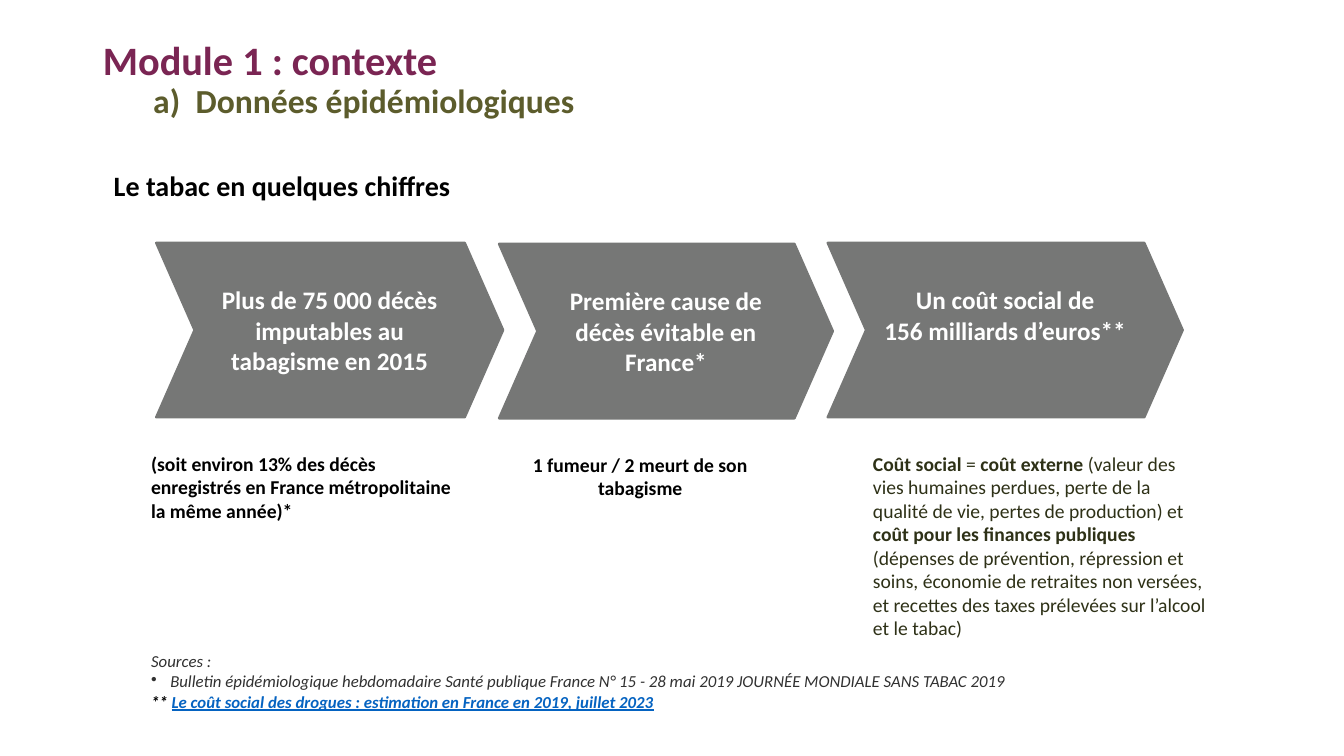
"""Build the slide on tobacco epidemiology figures."""
from pptx import Presentation
from pptx.dml.color import RGBColor
from pptx.enum.shapes import MSO_SHAPE
from pptx.enum.text import MSO_ANCHOR, MSO_AUTO_SIZE, PP_ALIGN
from pptx.util import Inches, Pt
from lxml.etree import SubElement
from pptx.oxml.ns import qn

BLACK, GREY, DARK = "000000", "767776", "2E3117"
LEFT, CENTER = PP_ALIGN.LEFT, PP_ALIGN.CENTER

TITLE = "Module 1 : contexte"
SUBTITLE = "Données épidémiologiques"
HEADING = "Le tabac en quelques chiffres"
CHEVRONS = [
    (1.55, 2.41, 3.44, 0.05, "Plus de 75 000 décès\vimputables au tabagisme en 2015"),
    (4.95, 2.42, 3.31, 0.05, "Première cause de décès évitable en France*"),
    (8.21, 2.41, 3.52, 0.35, "Un coût social de\v156 milliards d’euros**"),
]
NOTES = [
    ((1.4, 4.43, 3.24, 0.81), LEFT, BLACK, [
        ("(soit environ 13% des décès enregistrés en France métropolitaine "
         "la même année)*", True)]),
    ((4.84, 4.44, 3.02, 0.57), CENTER, BLACK, [
        ("1 fumeur / 2 meurt de son tabagisme", True)]),
    ((8.56, 4.43, 3.52, 1.99), LEFT, DARK, [
        ("Coût social ", True),
        ("= ", False),
        ("coût externe ", True),
        ("(valeur des vies humaines perdues, perte de la qualité de vie, "
         "pertes de production) et ", False),
        ("coût pour les finances publiques ", True),
        ("(dépenses de prévention, répression et soins, économie de retraites "
         "non versées, et recettes des taxes prélevées sur l’alcool et le tabac)", False)]),
]
SOURCES = [
    ("Sources :", None),
    ("Bulletin épidémiologique hebdomadaire Santé publique France N° 15 - "
     "28 mai 2019 JOURNÉE MONDIALE SANS TABAC 2019", "•"),
]
STUDY_MARK = "** "
STUDY = "Le coût social des drogues : estimation en France en 2019, juillet 2023"


def rgb(value):
    return RGBColor.from_string(value)


def style(r, size, color, bold=True, italic=False, underline=False):
    font = r.font
    font.name, font.size, font.color.rgb = "Calibri", Pt(size), rgb(color)
    font.bold, font.italic, font.underline = bold, italic, underline


def place(sp, box):
    sp.left, sp.top, sp.width, sp.height = map(Inches, box)


def add_box(s, box):
    tf = s.shapes.add_textbox(*map(Inches, box)).text_frame
    tf.word_wrap = True
    return tf


def add_bullet(p, tag, indent, hang, **attrs):
    pPr = p._p.get_or_add_pPr()
    pPr.set("marL", str(Inches(indent)))
    pPr.set("indent", str(-Inches(hang)))
    SubElement(pPr, qn(tag), **attrs)


def add_runs(p, runs, size, color):
    for text, bold in runs:
        r = p.add_run()
        r.text = text
        style(r, size, color, bold)


def fill_placeholder(sp, box, text, size, color, spacing, anchor):
    place(sp, box)
    tf = sp.text_frame
    tf.text = text
    tf.auto_size, tf.vertical_anchor = MSO_AUTO_SIZE.NONE, anchor
    p = tf.paragraphs[0]
    p.alignment, p.line_spacing, p.space_before = LEFT, spacing, Pt(0)
    style(p.runs[0], size, color)
    return p


def add_chevron(s, left, top, width, bottom, text):
    sp = s.shapes.add_shape(MSO_SHAPE.CHEVRON, *map(Inches, (left, top, width, 1.73)))
    sp.adjustments[0] = 0.22
    sp.shadow.inherit = False
    sp.fill.solid()
    sp.fill.fore_color.rgb = sp.line.color.rgb = rgb(GREY)
    sp.line.width = Pt(1.75)
    tf = sp.text_frame
    tf.word_wrap, tf.vertical_anchor = True, MSO_ANCHOR.MIDDLE
    tf.margin_bottom = Inches(bottom)
    p = tf.paragraphs[0]
    p.text, p.alignment = text, CENTER
    for r in p.runs:
        style(r, 18, "FFFFFF")


def add_sources(s):
    tf = add_box(s, (1.4, 6.41, 11.48, 0.8))
    for i, (text, bullet) in enumerate(SOURCES):
        p = tf.add_paragraph() if i else tf.paragraphs[0]
        p.text = text
        if bullet:
            add_bullet(p, "a:buChar", 0.19, 0.19, char=bullet)
        style(p.runs[0], 12, "313131", False, True)
    p = tf.add_paragraph()
    for text, color, underline in ((STUDY_MARK, BLACK, False), (STUDY, "0563C1", True)):
        r = p.add_run()
        r.text = text
        style(r, 12, color, True, True, underline)


def main():
    prs = Presentation()
    prs.slide_width, prs.slide_height = Inches(13.33), Inches(7.5)
    s = prs.slides.add_slide(prs.slide_layouts[1])
    fill_placeholder(s.shapes.title, (0.92, 0.4, 11.5, 0.49), TITLE,
                     28.8, "7A2553", 0.7, MSO_ANCHOR.MIDDLE)
    p = fill_placeholder(s.placeholders[1], (1.03, 0.79, 11.5, 0.71), SUBTITLE,
                         24, "5C5C2C", 0.9, MSO_ANCHOR.TOP)
    add_bullet(p, "a:buFont", 0.81, 0.42, typeface="+mj-lt")
    add_bullet(p, "a:buAutoNum", 0.81, 0.42, type="alphaLcParenR")
    add_runs(add_box(s, (1.03, 1.62, 11.56, 0.44)).paragraphs[0],
             [(HEADING, True)], 20, BLACK)
    for chevron in CHEVRONS:
        add_chevron(s, *chevron)
    for box, align, color, runs in NOTES:
        p = add_box(s, box).paragraphs[0]
        p.alignment = align
        add_runs(p, runs, 14, color)
    add_sources(s)
    prs.save("out.pptx")


if __name__ == "__main__":
    main()
